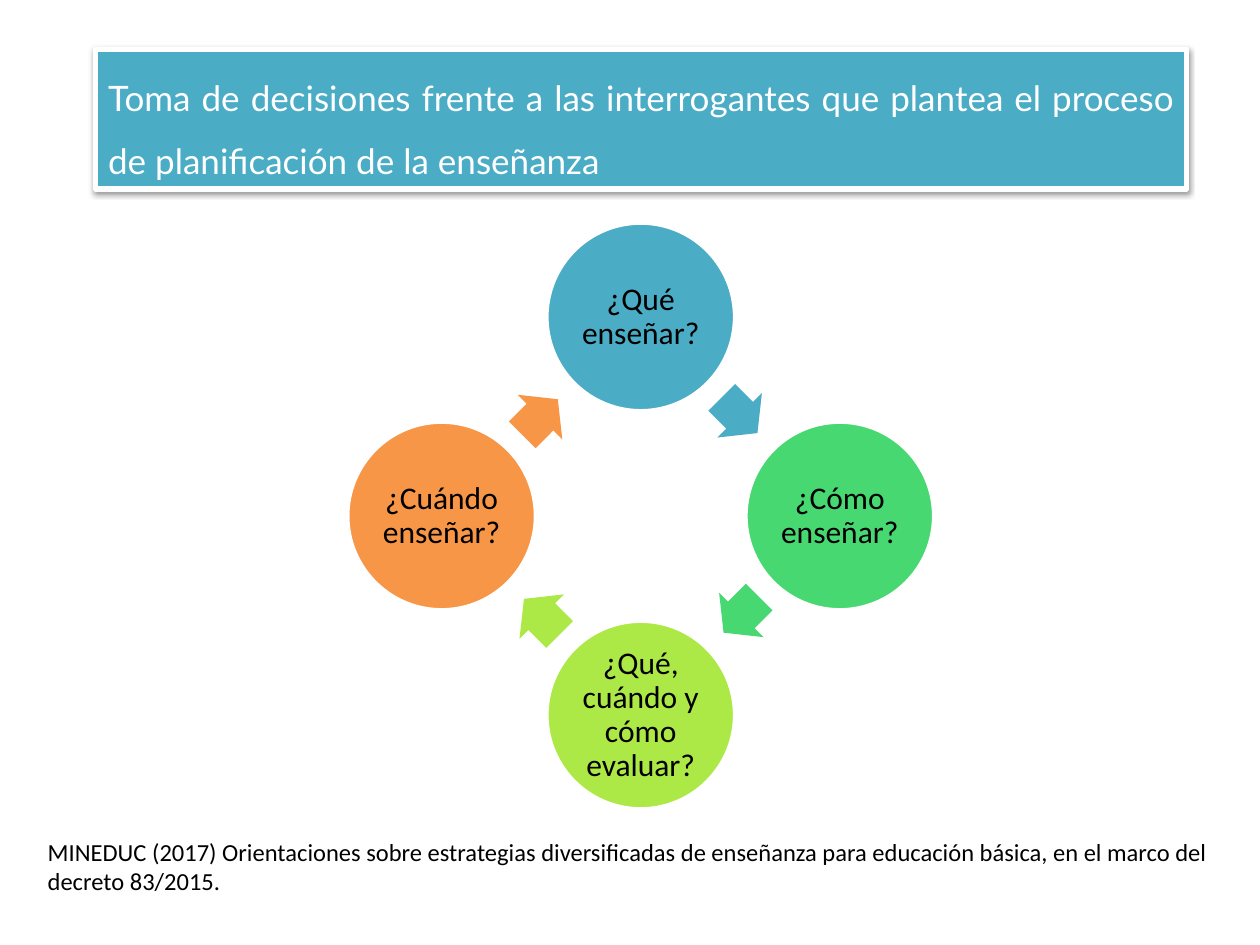
from math import cos, radians, sin
from lxml.etree import SubElement
from pptx import Presentation
from pptx.dml.color import RGBColor
from pptx.enum.shapes import MSO_SHAPE
from pptx.enum.text import MSO_ANCHOR, MSO_AUTO_SIZE, PP_ALIGN
from pptx.oxml.ns import qn
from pptx.util import Inches, Pt

TEAL = RGBColor(0x4B, 0xAC, 0xC6)
GREEN = RGBColor(0x47, 0xD8, 0x72)
LIME = RGBColor(0xAC, 0xE9, 0x46)
ORANGE = RGBColor(0xF7, 0x96, 0x46)
WHITE = RGBColor(0xFF, 0xFF, 0xFF)
BLACK = RGBColor(0x00, 0x00, 0x00)

deck = Presentation()
deck.slide_width, deck.slide_height = Inches(10), Inches(7.5)
page = deck.slides.add_slide(deck.slide_layouts[6])
column = deck.slide_width / 100
row = deck.slide_height / 75


def add_block(kind, left, top, width, height, fill, line_width=None):
    block = page.shapes.add_shape(
        kind, round(left * column), round(top * row), round(width * column), round(height * row)
    )
    block.shadow.inherit = False
    block.fill.solid()
    block.fill.fore_color.rgb = fill
    if line_width:
        block.line.color.rgb = WHITE
        block.line.width = Pt(line_width)
    else:
        block.line.fill.background()
    return block


def write_text(box, text, frame_format, para_format, font_format, color):
    frame = box.text_frame
    frame.word_wrap = True
    para = frame.paragraphs[0]
    span = para.add_run()
    span.text = text
    for target, values in ((frame, frame_format), (para, para_format), (span.font, font_format)):
        for name, value in values.items():
            setattr(target, name, value)
    span.font.color.rgb = color


growing = {"vertical_anchor": MSO_ANCHOR.TOP, "auto_size": MSO_AUTO_SIZE.SHAPE_TO_FIT_TEXT}
margins = ("margin_left", "margin_top", "margin_right", "margin_bottom")
centered = {"vertical_anchor": MSO_ANCHOR.MIDDLE, **dict.fromkeys(margins, Inches(0.03))}

title = add_block(MSO_SHAPE.RECTANGLE, 7.6, 3.9, 86.6, 11.1, TEAL, 3)
write_text(
    title,
    "Toma de decisiones frente a las interrogantes que plantea el proceso "
    "de planificación de la enseñanza",
    growing,
    {"alignment": PP_ALIGN.JUSTIFY, "line_spacing": 1.5},
    {"size": Pt(20), "name": "Lato"},
    WHITE,
)
effects = title.element.spPr.find(qn("a:effectLst"))
shadow = SubElement(
    effects, qn("a:outerShdw"),
    blurRad=str(Pt(3.1)), dist=str(Pt(1.6)), dir="5400000", rotWithShape="0",
)
shadow_color = SubElement(shadow, qn("a:srgbClr"), val=str(BLACK))
SubElement(shadow_color, qn("a:alpha"), val="38000")

center_x, center_y = 50.85, 40.95
circle_size, circle_radius = 14.9, 15.8
arrow_length, arrow_width, arrow_radius = 4, 5, 11.2
questions = (
    ("¿Qué enseñar?", TEAL),
    ("¿Cómo enseñar?", GREEN),
    ("¿Qué, cuándo y cómo evaluar?", LIME),
    ("¿Cuándo enseñar?", ORANGE),
)

for index, (question, color) in enumerate(questions):
    turn = 90 * index
    angle = radians(turn - 90)
    circle = add_block(
        MSO_SHAPE.OVAL,
        center_x + circle_radius * cos(angle) - circle_size / 2,
        center_y + circle_radius * sin(angle) - circle_size / 2,
        circle_size, circle_size, color, 2,
    )
    write_text(
        circle, question, centered,
        {"alignment": PP_ALIGN.CENTER, "line_spacing": 0.9},
        {"size": Pt(18), "name": "Calibri"},
        BLACK,
    )
    angle = radians(turn - 45.5)
    arrow = add_block(
        MSO_SHAPE.RIGHT_ARROW,
        center_x + arrow_radius * cos(angle) - arrow_length / 2,
        center_y + arrow_radius * sin(angle) - arrow_width / 2,
        arrow_length, arrow_width, color,
    )
    arrow.adjustments[0] = 0.6
    arrow.adjustments[1] = 0.5
    arrow.rotation = turn + 45

source = page.shapes.add_textbox(
    round(2.8 * column), round(65.9 * row), round(94.5 * column), round(5.7 * row)
)
write_text(
    source,
    "MINEDUC (2017) Orientaciones sobre estrategias diversificadas de enseñanza "
    "para educación básica, en el marco del decreto 83/2015.",
    growing,
    {"alignment": PP_ALIGN.LEFT},
    {"size": Pt(14), "name": "Calibri"},
    BLACK,
)

deck.save("out.pptx")
